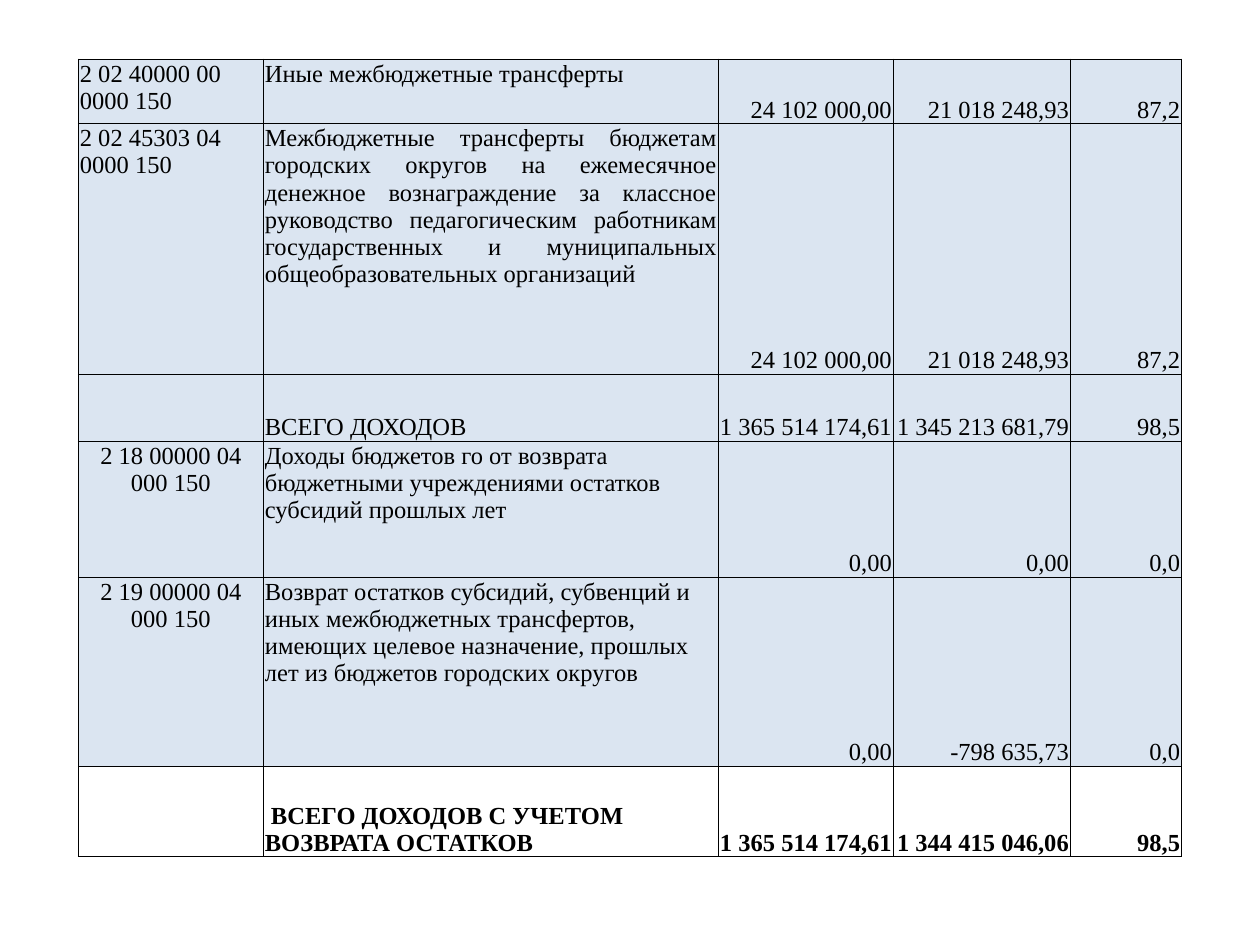
from lxml import etree
from pptx import Presentation
from pptx.dml.color import RGBColor
from pptx.enum import text
from pptx.oxml.ns import qn
from pptx.util import Cm, Pt

COLORS = {"text": "000000", "border": "000000", "band": "DBE5F1", "total": "FFFFFF"}
LEFT, CENTER, RIGHT, JUSTIFY = (
    text.PP_ALIGN.LEFT, text.PP_ALIGN.CENTER, text.PP_ALIGN.RIGHT, text.PP_ALIGN.JUSTIFY)
TOP, BOTTOM = text.MSO_ANCHOR.TOP, text.MSO_ANCHOR.BOTTOM

COL_WIDTHS = [3.73, 9.17, 3.53, 3.57, 2.24]
# height, code alignment, name alignment, name anchor, cell texts
ROWS = [
    (1.3, LEFT, JUSTIFY, TOP,
     ["2 02 40000 00 0000 150", "Иные межбюджетные трансферты",
      "24 102 000,00", "21 018 248,93", "87,2"]),
    (5.05, LEFT, JUSTIFY, TOP,
     ["2 02 45303 04 0000 150",
      "Межбюджетные трансферты бюджетам городских округов на ежемесячное денежное "
      "вознаграждение за классное руководство педагогическим работникам "
      "государственных и муниципальных общеобразовательных организаций",
      "24 102 000,00", "21 018 248,93", "87,2"]),
    (1.35, LEFT, LEFT, BOTTOM,
     ["", "ВСЕГО ДОХОДОВ", "1 365 514 174,61", "1 345 213 681,79", "98,5"]),
    (2.74, CENTER, LEFT, TOP,
     ["2 18 00000 04 000 150",
      "Доходы бюджетов го от возврата бюджетными учреждениями остатков "
      "субсидий прошлых лет",
      "0,00", "0,00", "0,0"]),
    (3.81, CENTER, LEFT, TOP,
     ["2 19 00000 04 000 150",
      "Возврат остатков субсидий, субвенций и иных межбюджетных трансфертов, "
      "имеющих целевое назначение, прошлых лет из бюджетов городских округов",
      "0,00", "-798 635,73", "0,0"]),
    (1.83, LEFT, LEFT, BOTTOM,
     ["", " ВСЕГО ДОХОДОВ С УЧЕТОМ ВОЗВРАТА ОСТАТКОВ",
      "1 365 514 174,61", "1 344 415 046,06", "98,5"]),
]
MARGINS = {"margin_left": Cm(0.03), "margin_right": Cm(0.03),
           "margin_top": Cm(0.03), "margin_bottom": 0}


def add_borders(cell):
    tc_pr = cell._tc.get_or_add_tcPr()
    for side in ("lnL", "lnR", "lnT", "lnB"):
        ln = etree.SubElement(tc_pr, qn(f"a:{side}"), w=str(Pt(0.5)))
        fill = etree.SubElement(ln, qn("a:solidFill"))
        etree.SubElement(fill, qn("a:srgbClr"), val=COLORS["border"])


prs = Presentation()
prs.slide_width, prs.slide_height = Cm(25.4), Cm(19.05)
s = prs.slides.add_slide(prs.slide_layouts[6])

table = s.shapes.add_table(
    len(ROWS), len(COL_WIDTHS), Cm(1.58), Cm(1.19),
    Cm(sum(COL_WIDTHS)), Cm(sum(row[0] for row in ROWS))).table
table.first_row = table.horz_banding = False
for column, width in zip(table.columns, COL_WIDTHS):
    column.width = Cm(width)

for i, (height, code_align, name_align, name_anchor, values) in enumerate(ROWS):
    table.rows[i].height = Cm(height)
    is_total = i == len(ROWS) - 1
    aligns = [code_align, name_align] + [RIGHT] * 3
    anchors = [TOP, name_anchor] + [BOTTOM] * 3
    for j, value in enumerate(values):
        cell = table.cell(i, j)
        add_borders(cell)
        cell.fill.solid()
        cell.fill.fore_color.rgb = RGBColor.from_string(
            COLORS["total" if is_total else "band"])
        for name, setting in {**MARGINS, "vertical_anchor": anchors[j]}.items():
            setattr(cell, name, setting)
        if not value:
            continue
        p = cell.text_frame.paragraphs[0]
        p.alignment = aligns[j]
        r = p.add_run()
        r.text = value
        for name, setting in {"name": "Times New Roman", "size": Pt(14),
                              "bold": is_total}.items():
            setattr(r.font, name, setting)
        r.font.color.rgb = RGBColor.from_string(COLORS["text"])

prs.save("out.pptx")
